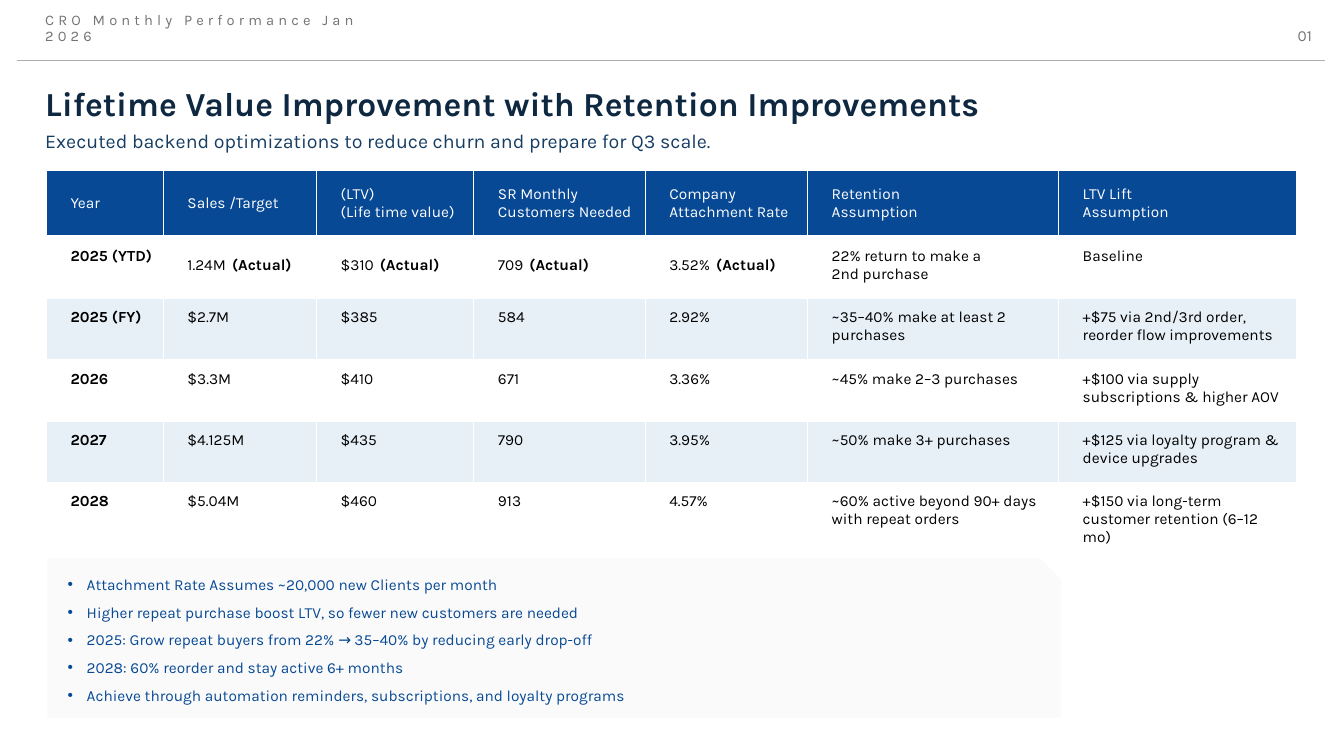
from dataclasses import dataclass

from lxml import etree
from pptx import Presentation
from pptx.dml.color import RGBColor
from pptx.enum.shapes import MSO_CONNECTOR, MSO_SHAPE
from pptx.enum.text import MSO_ANCHOR, PP_ALIGN
from pptx.oxml.ns import qn
from pptx.util import Pt

PX = 9144
STRAIGHT = MSO_CONNECTOR.STRAIGHT
SNIPPED = MSO_SHAPE.SNIP_1_RECTANGLE
TOP, MIDDLE, BOTTOM = MSO_ANCHOR.TOP, MSO_ANCHOR.MIDDLE, MSO_ANCHOR.BOTTOM
LEFT, RIGHT = PP_ALIGN.LEFT, PP_ALIGN.RIGHT


@dataclass
class Theme:
    font: str = "Karla"
    title: str = "0E2841"
    subtitle: str = "163E64"
    muted: str = "747474"
    rule: str = "AEAEAE"
    blue: str = "074995"
    band: str = "E7F0F7"
    panel: str = "FAFAFA"
    white: str = "FFFFFF"
    black: str = "000000"
    title_size: float = 24
    subtitle_size: float = 14
    running_size: float = 10.5
    body_size: float = 11
    gap_size: float = 18


theme = Theme()


def add_text(paragraph, text, size, color, bold=False):
    for index, line in enumerate(text.split("\n")):
        if index:
            paragraph.add_line_break()
        run = paragraph.add_run()
        run.text = line
        run.font.name = theme.font
        run.font.size = Pt(size)
        run.font.bold = bold
        run.font.color.rgb = RGBColor.from_string(color)
    return run


def add_border(cell, side, width):
    line = etree.SubElement(cell._tc.get_or_add_tcPr(), qn(f"a:ln{side}"), w=str(Pt(width)))
    fill = etree.SubElement(line, qn("a:solidFill"))
    etree.SubElement(fill, qn("a:srgbClr"), val=theme.white)


presentation = Presentation()
presentation.slide_width = 1333 * PX
presentation.slide_height = 750 * PX
slide = presentation.slides.add_slide(presentation.slide_layouts[6])

labels = [
    ((35, 82, 974, 46), "Lifetime Value Improvement with Retention Improvements",
     theme.title_size, theme.title, True, BOTTOM, LEFT, 0.9, 0),
    ((35, 123, 777, 34), "Executed backend optimizations to reduce churn and prepare for Q3 scale.",
     theme.subtitle_size, theme.subtitle, False, TOP, LEFT, 1.0, 0),
    ((35, 22, 384, 27), "CRO Monthly Performance Jan 2026",
     theme.running_size, theme.muted, False, BOTTOM, LEFT, 0.9, 300),
    ((1270, 22, 41, 27), "01",
     theme.body_size, theme.muted, False, BOTTOM, RIGHT, 0.9, 0),
]
for box, text, size, color, bold, anchor, alignment, spacing, tracking in labels:
    shape = slide.shapes.add_textbox(*(value * PX for value in box))
    frame = shape.text_frame
    frame.word_wrap = True
    frame.vertical_anchor = anchor
    paragraph = frame.paragraphs[0]
    paragraph.alignment = alignment
    paragraph.line_spacing = spacing
    run = add_text(paragraph, text, size, color, bold)
    if tracking:
        run._r.get_or_add_rPr().set("spc", str(tracking))

rule = slide.shapes.add_connector(STRAIGHT, 17 * PX, 60 * PX, 1314 * PX, 60 * PX)
rule.line.color.rgb = RGBColor.from_string(theme.rule)
rule.line.width = Pt(0.75)
etree.SubElement(rule._element.spPr, qn("a:effectLst"))

headers = [
    ["Year"], ["Sales /Target"], ["(LTV)", "(Life time value)"],
    ["SR Monthly\nCustomers Needed"], ["Company", "Attachment Rate"],
    ["Retention\nAssumption"], ["LTV Lift\nAssumption"],
]
records = [
    ["2025 (YTD)", "1.24M", "$310", "709", "3.52%",
     "22% return to make a\n2nd purchase", "Baseline"],
    ["2025 (FY)", "$2.7M", "$385", "584", "2.92%",
     "~35–40% make at least 2 purchases",
     "+$75 via 2nd/3rd order, reorder flow improvements"],
    ["2026", "$3.3M", "$410", "671", "3.36%",
     "~45% make 2–3 purchases", "+$100 via supply subscriptions & higher AOV"],
    ["2027", "$4.125M", "$435", "790", "3.95%",
     "~50% make 3+ purchases", "+$125 via loyalty program & device upgrades"],
    ["2028", "$5.04M", "$460", "913", "4.57%",
     "~60% active beyond 90+ days with repeat orders",
     "+$150 via long-term customer retention (6–12 mo)"],
]
rows = [headers] + [[[text] for text in record] for record in records]
column_widths = [116, 152, 156, 170, 161, 249, 236]
row_heights = [66] + [61] * len(records)
actual_columns = range(1, 5)

table = slide.shapes.add_table(
    len(rows), len(headers), 46 * PX, 169 * PX,
    sum(column_widths) * PX, sum(row_heights) * PX).table
table.first_row = False
table.horz_banding = False
for column, width in zip(table.columns, column_widths):
    column.width = width * PX
for row, height in zip(table.rows, row_heights):
    row.height = height * PX

for row_index, row in enumerate(rows):
    is_header = row_index == 0
    if is_header:
        fill_color = theme.blue
    else:
        fill_color = theme.white if row_index % 2 else theme.band
    text_color = theme.white if is_header else theme.black
    for column_index, texts in enumerate(row):
        cell = table.cell(row_index, column_index)
        cell.vertical_anchor = MIDDLE if is_header else TOP
        cell.margin_left = 24 * PX
        cell.margin_right = 10 * PX
        cell.margin_top = cell.margin_bottom = (5 if is_header else 10) * PX
        for side in "LRTB":
            under_header = (row_index, side) in [(0, "B"), (1, "T")]
            add_border(cell, side, 3 if under_header else 1)
        cell.fill.solid()
        cell.fill.fore_color.rgb = RGBColor.from_string(fill_color)
        for index, text in enumerate(texts):
            frame = cell.text_frame
            paragraph = frame.add_paragraph() if index else frame.paragraphs[0]
            bold = not is_header and column_index == 0
            add_text(paragraph, text, theme.body_size, text_color, bold)
        if row_index == 1 and column_index in actual_columns:
            add_text(paragraph, " ", theme.gap_size, text_color)
            add_text(paragraph, "(Actual)", theme.body_size, text_color, True)

notes = [
    "Attachment Rate Assumes ~20,000 new Clients per month",
    "Higher repeat purchase boost LTV, so fewer new customers are needed",
    "2025: Grow repeat buyers from 22% → 35–40% by reducing early drop-off",
    "2028: 60% reorder and stay active 6+ months",
    "Achieve through automation reminders, subscriptions, and loyalty programs",
]
panel = slide.shapes.add_shape(SNIPPED, 47 * PX, 554 * PX, 1005 * PX, 158 * PX)
panel.adjustments[0] = 0.13
panel.shadow.inherit = False
panel.fill.solid()
panel.fill.fore_color.rgb = RGBColor.from_string(theme.panel)
panel.line.fill.background()
frame = panel.text_frame
frame.word_wrap = True
frame.vertical_anchor = MIDDLE
frame.margin_left = 20 * PX
frame.margin_right = 12 * PX
frame.margin_top = 0
frame.margin_bottom = 16 * PX
for index, note in enumerate(notes):
    paragraph = frame.add_paragraph() if index else frame.paragraphs[0]
    properties = paragraph._p.get_or_add_pPr()
    properties.set("marL", str(19 * PX))
    properties.set("indent", str(-19 * PX))
    etree.SubElement(properties, qn("a:buFont"), typeface="Arial")
    etree.SubElement(properties, qn("a:buChar"), char="•")
    paragraph.alignment = LEFT
    paragraph.line_spacing = 1.5
    add_text(paragraph, note, theme.body_size, theme.blue)

presentation.save("out.pptx")
